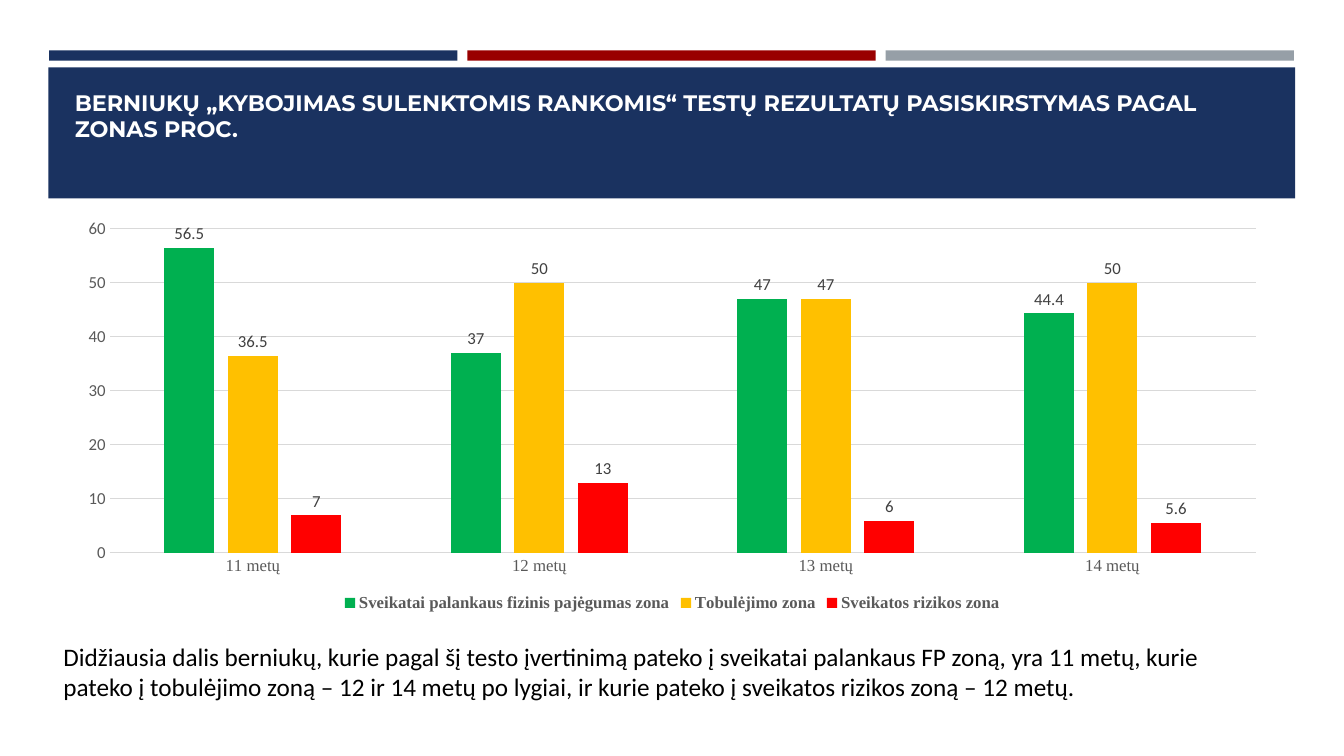
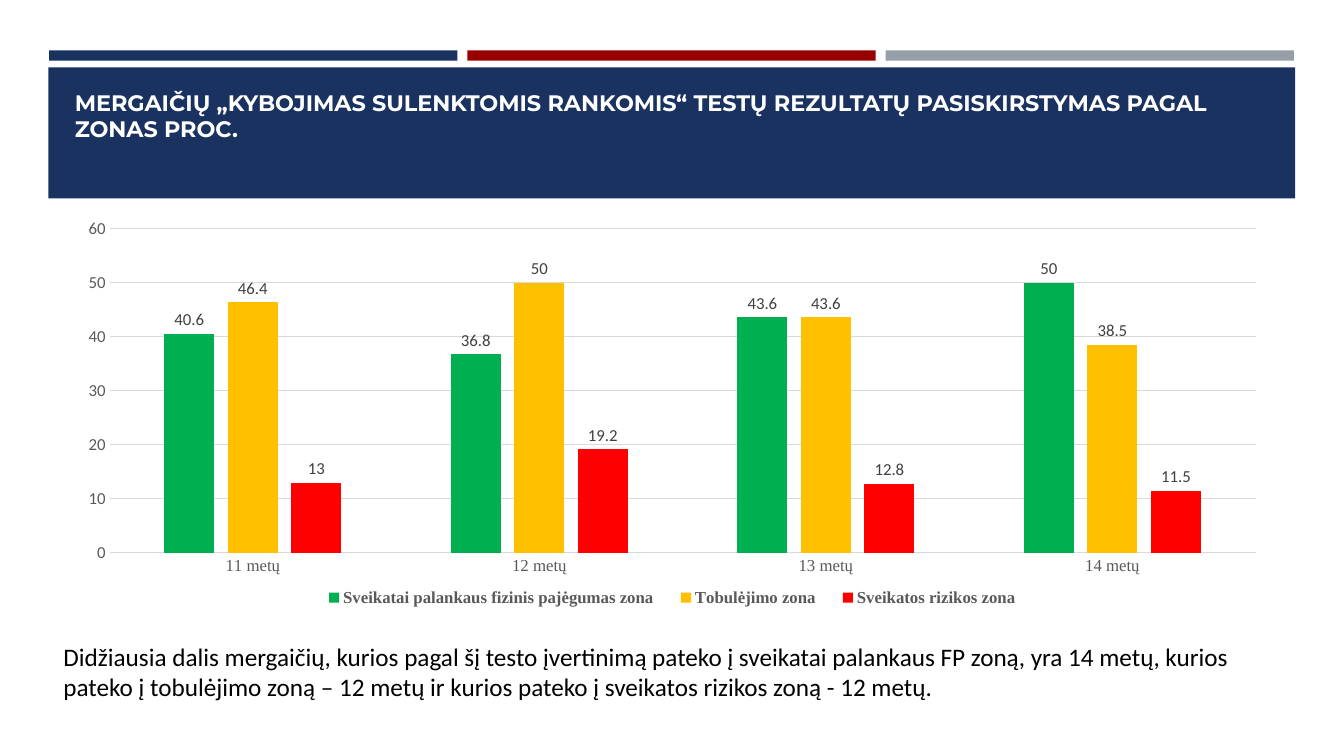
from lxml.etree import SubElement
from pptx import Presentation
from pptx.chart.data import CategoryChartData
from pptx.dml.color import RGBColor
from pptx.enum.chart import XL_CHART_TYPE, XL_LABEL_POSITION, XL_LEGEND_POSITION, XL_TICK_MARK
from pptx.enum.text import MSO_ANCHOR, MSO_AUTO_SIZE, PP_ALIGN
from pptx.oxml.ns import qn
from pptx.util import Cm, Pt

NAVY = RGBColor(0x1A, 0x32, 0x60)
DARK_RED = RGBColor(0x99, 0x00, 0x00)
GREY = RGBColor(0x96, 0x9F, 0xA7)
WHITE = RGBColor(0xFF, 0xFF, 0xFF)
BLACK = RGBColor(0x00, 0x00, 0x00)
AXIS_TEXT = RGBColor(0x59, 0x59, 0x59)
LABEL_TEXT = RGBColor(0x40, 0x40, 0x40)
GRID = RGBColor(0xD9, 0xD9, 0xD9)
GREEN = RGBColor(0x00, 0xB0, 0x50)
AMBER = RGBColor(0xFF, 0xC0, 0x00)
RED = RGBColor(0xFF, 0x00, 0x00)

TITLE_FONT, BODY_FONT, SERIF_FONT = "Montserrat", "Calibri", "Times New Roman"
LEFT, WIDTH = Cm(1.63), Cm(30.63)

AGES = ["11 metų", "12 metų", "13 metų", "14 metų"]
ZONES = [
    ("Sveikatai palankaus fizinis pajėgumas zona", GREEN),
    ("Tobulėjimo zona", AMBER),
    ("Sveikatos rizikos zona", RED),
]
# title, values by zone, legend box as fractions of the chart, conclusion
RESULTS = [
    (
        "BERNIUKŲ „KYBOJIMAS SULENKTOMIS RANKOMIS“ TESTŲ REZULTATŲ PASISKIRSTYMAS PAGAL ZONAS PROC.",
        [(56.5, 37, 47, 44.4), (36.5, 50, 47, 50), (7, 13, 6, 5.6)],
        None,
        "Didžiausia dalis berniukų, kurie pagal šį testo įvertinimą pateko į sveikatai palankaus "
        "FP zoną, yra 11 metų, kurie pateko į tobulėjimo zoną – 12 ir 14 metų po lygiai, "
        "ir kurie pateko į sveikatos rizikos zoną – 12 metų.",
    ),
    (
        "MERGAIČIŲ „KYBOJIMAS SULENKTOMIS RANKOMIS“ TESTŲ REZULTATŲ PASISKIRSTYMAS PAGAL ZONAS PROC.",
        [(40.6, 36.8, 43.6, 50), (46.4, 50, 43.6, 38.5), (13, 19.2, 12.8, 11.5)],
        (0.2, 0.92, 0.6, 0.07),
        "Didžiausia dalis mergaičių, kurios pagal šį testo įvertinimą pateko į sveikatai palankaus "
        "FP zoną, yra 14 metų, kurios pateko į tobulėjimo zoną – 12 metų ir kurios pateko "
        "į sveikatos rizikos zoną - 12 metų.",
    ),
]


def style_font(font, name, size, color, bold=False):
    font.name, font.size, font.bold = name, Pt(size), bold
    font.color.rgb = color


def set_layout(part, box, inner=False):
    """Fix a chart part at box (x, y, width, height), in fractions of the chart."""
    layout = part.find(qn("c:layout"))
    if layout is None:
        layout = SubElement(part, qn("c:layout"))
        part.remove(layout)
        part.insert(1 if part.tag == qn("c:legend") else 0, layout)
    manual = SubElement(layout, qn("c:manualLayout"))
    if inner:
        SubElement(manual, qn("c:layoutTarget")).set("val", "inner")
    for tag in ("xMode", "yMode"):
        SubElement(manual, qn(f"c:{tag}")).set("val", "edge")
    for tag, value in zip("xywh", box):
        SubElement(manual, qn(f"c:{tag}")).set("val", str(value))


prs = Presentation()
prs.slide_width, prs.slide_height = Cm(33.87), Cm(19.05)
layout = prs.slide_layouts[5]
slides = [prs.slides.add_slide(layout) for _ in RESULTS]

# Bands are drawn once and moved to the layout that the slides share
bands = [(1.24 + i * 10.54, 1.27, 10.29, 0.26, color)
         for i, color in enumerate((NAVY, DARK_RED, GREY))]
bands.append((1.22, 1.7, 31.42, 3.3, NAVY))
for i, (x, y, w, h, color) in enumerate(bands):
    band = slides[0].shapes.add_shape(1, Cm(x), Cm(y), Cm(w), Cm(h))
    band.name = f"Band {i + 1}"
    band.shadow.inherit = False
    band.fill.solid()
    band.fill.fore_color.rgb = color
    band.line.fill.background()
    band.element.nvSpPr.cNvPr.set("id", str(20 + i))
    layout.shapes.element.insert(2 + i, band.element)

for s, (title, values, legend_box, conclusion) in zip(slides, RESULTS):
    sp = s.shapes.title
    sp.left, sp.top, sp.width, sp.height = LEFT, Cm(1.55), WIDTH, Cm(2.16)
    tf = sp.text_frame
    tf.text = title
    tf.auto_size = MSO_AUTO_SIZE.NONE
    tf.vertical_anchor = MSO_ANCHOR.BOTTOM
    p = tf.paragraphs[0]
    p.alignment = PP_ALIGN.LEFT
    p.line_spacing = 0.95
    style_font(p.font, TITLE_FONT, 16, WHITE, True)

    data = CategoryChartData()
    data.categories = AGES
    for (zone, _), zone_values in zip(ZONES, values):
        data.add_series(zone, zone_values)
    chart = s.shapes.add_chart(XL_CHART_TYPE.COLUMN_CLUSTERED,
                               LEFT, Cm(5.31), WIDTH, Cm(10.21), data).chart
    style_font(chart.font, BODY_FONT, 10, BLACK)
    chart.has_title = False
    set_layout(chart.plots[0]._element.getparent(), (0.037, 0.045, 0.943, 0.8), inner=True)

    plot = chart.plots[0]
    plot.gap_width, plot.overlap = 219, -27
    plot.vary_by_categories = False
    for series, (_, color) in zip(plot.series, ZONES):
        series.format.fill.solid()
        series.format.fill.fore_color.rgb = color
        labels = series.data_labels
        labels.show_value = True
        labels.position = XL_LABEL_POSITION.OUTSIDE_END
        style_font(labels.font, BODY_FONT, 12, LABEL_TEXT)

    for axis, font in ((chart.category_axis, SERIF_FONT), (chart.value_axis, BODY_FONT)):
        axis.major_tick_mark = axis.minor_tick_mark = XL_TICK_MARK.NONE
        style_font(axis.tick_labels.font, font, 12, AXIS_TEXT)
    value_axis = chart.value_axis
    value_axis.minimum_scale, value_axis.maximum_scale, value_axis.major_unit = 0, 60, 10
    value_axis.format.line.fill.background()
    for line in (chart.category_axis.format.line, value_axis.major_gridlines.format.line):
        line.color.rgb = GRID
        line.width = Pt(0.75)

    chart.has_legend = True
    legend = chart.legend
    legend.position = XL_LEGEND_POSITION.BOTTOM
    legend.include_in_layout = False
    style_font(legend.font, SERIF_FONT, 12, AXIS_TEXT, True)
    if legend_box:
        set_layout(legend._element, legend_box)

    tf = s.shapes.add_textbox(Cm(1.35), Cm(15.06), WIDTH, Cm(3.73)).text_frame
    tf.word_wrap = True
    tf.vertical_anchor = MSO_ANCHOR.MIDDLE
    p = tf.paragraphs[0]
    p.text = conclusion
    style_font(p.font, BODY_FONT, 18, BLACK)

prs.save("out.pptx")
